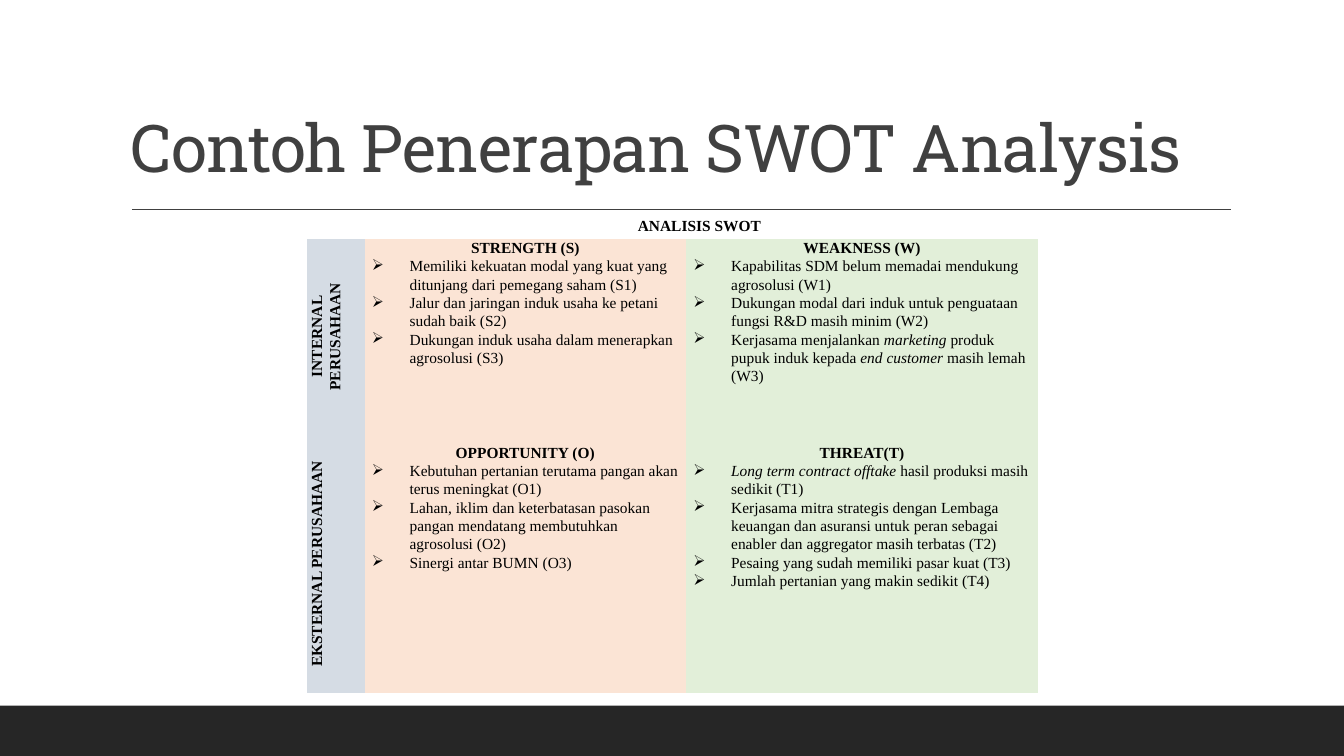
from pptx import Presentation
from pptx.dml.color import RGBColor
from pptx.enum.shapes import MSO_CONNECTOR as CONN, MSO_SHAPE as SHAPE
from pptx.enum.text import MSO_ANCHOR as ANCHOR, PP_ALIGN as ALIGN
from pptx.oxml.ns import qn
from pptx.util import Pt
from lxml.etree import SubElement

# Content: *asterisks* mark italics
TITLE = "Contoh Penerapan SWOT Analysis"
HEADING = "ANALISIS SWOT "
SIDES = ["INTERNAL PERUSAHAAN", "EKSTERNAL PERUSAHAAN"]
QUADRANTS = [
    [("STRENGTH (S)", [
        "Memiliki kekuatan modal yang kuat yang ditunjang dari pemegang saham (S1)",
        "Jalur dan jaringan induk usaha ke petani sudah baik (S2)",
        "Dukungan induk usaha dalam menerapkan agrosolusi (S3)"]),
     ("WEAKNESS (W)", [
        "Kapabilitas SDM belum memadai mendukung agrosolusi (W1)",
        "Dukungan modal dari induk untuk penguataan fungsi R&D masih minim (W2)",
        "Kerjasama menjalankan *marketing *produk pupuk induk kepada "
        "*end customer *masih lemah (W3)"])],
    [("OPPORTUNITY (O)", [
        "Kebutuhan pertanian terutama pangan akan terus meningkat (O1)",
        "Lahan, iklim dan keterbatasan pasokan pangan mendatang "
        "membutuhkan agrosolusi (O2)",
        "Sinergi antar BUMN (O3)"]),
     ("THREAT(T)", [
        "*Long term contract offtake *hasil produksi masih sedikit (T1)",
        "Kerjasama mitra strategis dengan Lembaga keuangan dan asuransi untuk "
        "peran sebagai enabler dan aggregator masih terbatas (T2)",
        "Pesaing yang sudah memiliki pasar kuat (T3)",
        "Jumlah pertanian yang makin sedikit (T4)"])],
]

# Style
BLACK = RGBColor(0x00, 0x00, 0x00)
DARK = RGBColor(0x26, 0x26, 0x26)
GREY = RGBColor(0x40, 0x40, 0x40)
SIDE_FILL = RGBColor(0xD5, 0xDC, 0xE4)
QUADRANT_FILLS = [RGBColor(0xFB, 0xE4, 0xD5), RGBColor(0xE2, 0xEF, 0xD9)]
TITLE_FONT, BODY_FONT = "Roboto Slab", "Times New Roman"
NO_STYLE = "{2D5ABB26-0587-4C30-8999-92F81FD0307C}"

# Layout in points
WIDTH, HEIGHT, FOOTER = 960, 540, 36
COLS = [41, 229.7, 251.3]
ROWS = [15.5, 146.2, 178.6]


def add_run(p, text, size, font, color, bold=False, italic=False):
    r = p.add_run()
    r.text = text
    f = r.font
    f.size, f.name, f.bold, f.italic = Pt(size), font, bold, italic
    f.color.rgb = color
    return r


def add_heading(p, text):
    p.alignment = ALIGN.CENTER
    p.line_spacing = 1.07
    add_run(p, text, 11, BODY_FONT, BLACK, bold=True)


def add_bullet(p, text):
    p.line_spacing = 1.07
    pPr = p._p.get_or_add_pPr()
    pPr.set("marL", str(Pt(27)))
    pPr.set("indent", str(-Pt(27)))
    SubElement(pPr, qn("a:buChar")).set("char", "➢")
    for i, part in enumerate(text.split("*")):
        if part:
            add_run(p, part, 11, BODY_FONT, BLACK, italic=i % 2 == 1)


prs = Presentation()
prs.slide_width, prs.slide_height = Pt(WIDTH), Pt(HEIGHT)
s = prs.slides.add_slide(prs.slide_layouts[6])

# Footer band
band = s.shapes.add_shape(SHAPE.RECTANGLE, 0, Pt(HEIGHT - FOOTER), Pt(WIDTH), Pt(FOOTER))
band.shadow.inherit = False
band.fill.solid()
band.fill.fore_color.rgb = DARK
band.line.fill.background()

# Rule under the title
rule = s.shapes.add_connector(CONN.STRAIGHT, Pt(94.3), Pt(149.5), Pt(879), Pt(149.5))
rule.line.color.rgb = GREY
rule.line.width = Pt(1)
SubElement(rule._element.spPr, qn("a:effectLst"))

# Title
tf = s.shapes.add_textbox(Pt(86.4), Pt(22.5), Pt(792), Pt(114.5)).text_frame
tf.word_wrap = True
tf.vertical_anchor = ANCHOR.BOTTOM
p = tf.paragraphs[0]
p.line_spacing = 0.9
r = add_run(p, TITLE, 47, TITLE_FONT, GREY)
r.font._element.set("spc", "-50")

# SWOT table
frame = s.shapes.add_table(len(ROWS), len(COLS), Pt(219.4), Pt(155),
                           Pt(sum(COLS)), Pt(sum(ROWS)))
table = frame.table
table.first_row = table.horz_banding = False
table._tbl.tblPr.find(qn("a:tableStyleId")).text = NO_STYLE
for col, width in zip(table.columns, COLS):
    col.width = Pt(width)
for row, height in zip(table.rows, ROWS):
    row.height = Pt(height)
for cell in table.iter_cells():
    cell.margin_left = cell.margin_right = Pt(5.2)
    cell.margin_top = cell.margin_bottom = 0
    cell.fill.background()

# Heading row; the empty cells keep the small text height
for cell in (table.cell(0, 0), table.cell(0, 2)):
    cell.text_frame.paragraphs[0]._p.get_or_add_endParaRPr().set("sz", "1100")
table.cell(0, 1).merge(table.cell(0, 2))
add_heading(table.cell(0, 1).text_frame.paragraphs[0], HEADING)

# Side labels and quadrants
for i, (side, quadrants) in enumerate(zip(SIDES, QUADRANTS), 1):
    cell = table.cell(i, 0)
    cell.fill.solid()
    cell.fill.fore_color.rgb = SIDE_FILL
    cell._tc.get_or_add_tcPr().set("vert", "vert270")
    p = cell.text_frame.paragraphs[0]
    add_heading(p, side)
    p._p.get_or_add_pPr().set("marL", str(Pt(6)))
    for j, (name, points) in enumerate(quadrants, 1):
        cell = table.cell(i, j)
        cell.fill.solid()
        cell.fill.fore_color.rgb = QUADRANT_FILLS[j - 1]
        tf = cell.text_frame
        add_heading(tf.paragraphs[0], name)
        for point in points:
            add_bullet(tf.add_paragraph(), point)

prs.save("out.pptx")
